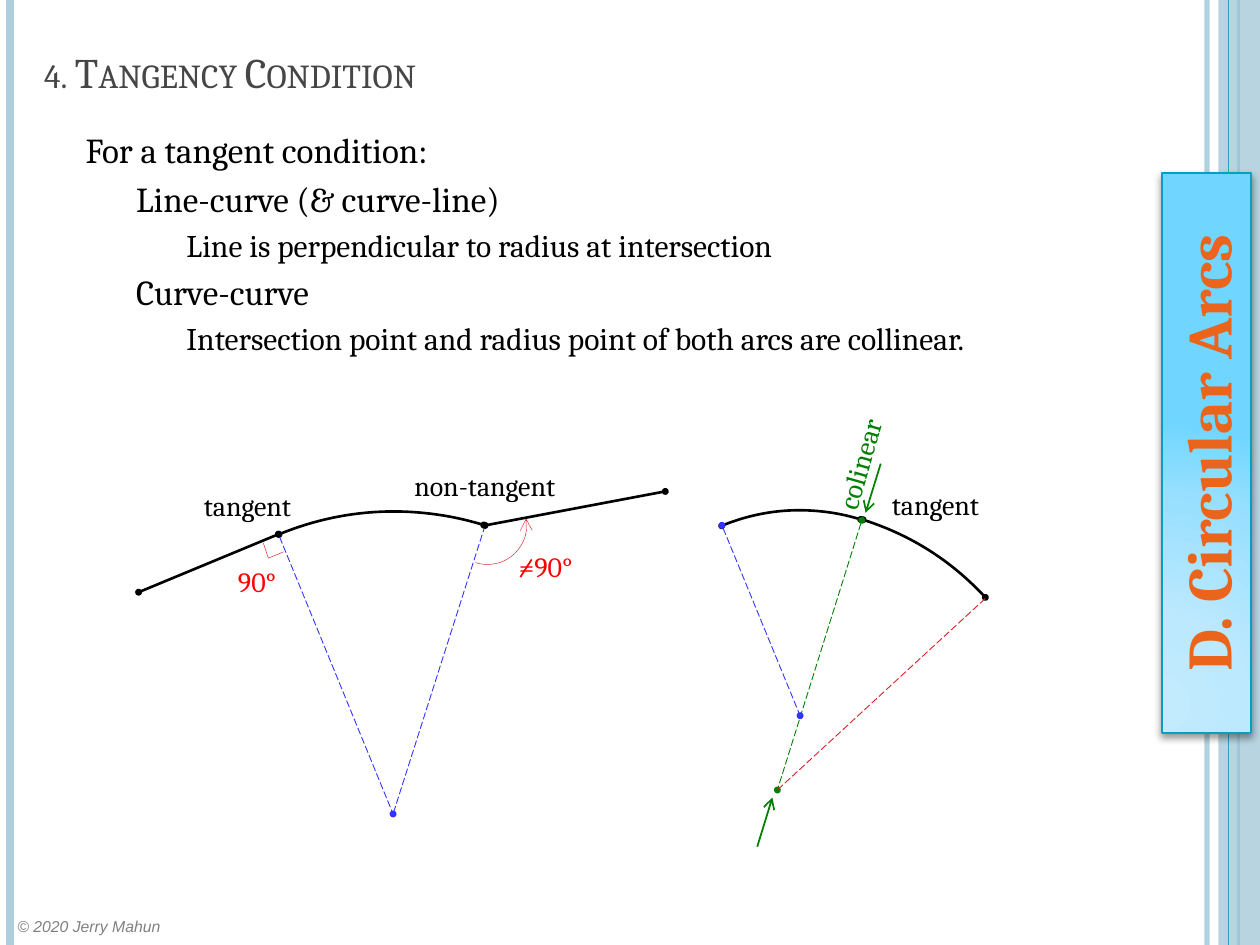
"""Build the slide on the tangency condition of circular arcs."""
from lxml.etree import SubElement
from pptx import Presentation
from pptx.dml.color import RGBColor
from pptx.enum.dml import MSO_LINE
from pptx.enum.shapes import MSO_CONNECTOR, MSO_SHAPE
from pptx.enum.text import MSO_ANCHOR, MSO_AUTO_SIZE, PP_ALIGN
from pptx.oxml.ns import qn
from pptx.util import Inches, Pt

WIDTH, HEIGHT = 10, 7.5
BAND_LEFT = 9.67
COLORS = {
    "black": "000000", "blue": "3333FF", "green": "008000", "red": "FF0000",
    "crimson": "DA1F28", "pale": "ADCEDC", "teal": "2DA2BF", "edge": "079EC3",
    "orange": "EB641B", "heading": "464646", "gray": "808080",
}
TITLE = "4. Tangency Condition"
BODY = [
    (0, "For a tangent condition:"),
    (1, "Line-curve (& curve-line)"),
    (2, "Line is perpendicular to radius at intersection"),
    (1, "Curve-curve"),
    (2, "Intersection point and radius point of both arcs are collinear."),
]
BODY_SIZES = (20, 20, 18)
LEVEL_INDENT = 0.4
STRIPES_BELOW = [(9.58, "pale", 3, 93), (0.08, "pale", 4.5, 100), (9.83, "teal", 1.5, 100)]
STRIPES_ABOVE = [(9.75, "teal", 0.75, 100)]
BANNER_STOPS = [(0, "C2EBFD"), (30, "BCE9FE"), (75, "96DFFE"), (100, "70D6FF")]

TANGENT, BREAK, CENTER = (2.21, 4.24), (3.85, 4.17), (3.12, 6.46)
CORNER = (2.13, 4.43)
START, JOIN, END = (5.73, 4.17), (6.84, 4.13), (7.82, 4.75)
NEAR_CENTER, FAR_CENTER = (6.35, 5.68), (6.17, 6.27)
DOTS = ("oval", "oval")
PLAIN = (None, None)

DIAGRAMS = [
    {
        "arcs": [((3.13, 6.46), 2.4, 337.6, (270, 309.6), "black", 1.5, DOTS),
                 ((3.87, 4.17), 0.31, 0, (349.8, 108), "crimson", 0.25, ("arrow", None))],
        "lines": [(BREAK, CENTER, "blue", 0.5, True, PLAIN),
                  (TANGENT, CENTER, "blue", 0.5, True, DOTS),
                  (TANGENT, (1.1, 4.7), "black", 1.5, False, DOTS),
                  ((2.09, 4.31), CORNER, "crimson", 0.25, False, PLAIN),
                  ((2.25, 4.38), CORNER, "crimson", 0.25, False, PLAIN),
                  ((5.28, 3.9), BREAK, "black", 1.5, False, DOTS),
                  ((4.22, 4.44), (4.13, 4.58), "red", 1, False, PLAIN)],
        "labels": [("90°", 1.79, 4.43, 0.54, 0, "red"),
                   ("=90°", 4.02, 4.31, 1.03, 0, "red"),
                   ("tangent", 1.52, 3.83, 1.01, 0, "black"),
                   ("non-tangent", 3.19, 3.67, 1.47, 0, "black")],
    },
    {
        "arcs": [(NEAR_CENTER, 1.63, 337.6, (270, 309.6), "black", 1.5, DOTS),
                 (FAR_CENTER, 2.25, 17.6, (270, 299.6), "black", 1.5, DOTS)],
        "lines": [(JOIN, FAR_CENTER, "green", 0.5, True, DOTS),
                  (END, FAR_CENTER, "crimson", 0.5, True, PLAIN),
                  (START, NEAR_CENTER, "blue", 0.5, True, DOTS),
                  ((6.99, 3.68), (6.87, 4.07), "green", 1, False, (None, "arrow")),
                  ((6.13, 6.33), (6.01, 6.72), "green", 1, False, ("arrow", None))],
        "labels": [("colinear", 6.32, 3.45, 1.03, 286.1, "green"),
                   ("tangent", 6.98, 3.82, 1.01, 0, "black")],
    },
]


def rgb(name):
    return RGBColor.from_string(COLORS[name])


def inches(*lengths):
    return [Inches(length) for length in lengths]


def add_alpha(element, percent):
    color = next(element.iter(qn("a:srgbClr")))
    SubElement(color, qn("a:alpha"), val=str(percent * 1000))


def style_line(line, color, width, ends=PLAIN, dashed=False):
    line.color.rgb = rgb(color)
    line.width = Pt(width)
    if dashed:
        line.dash_style = MSO_LINE.LONG_DASH
    for tag, kind in zip(("a:headEnd", "a:tailEnd"), ends):
        if kind:
            size = "sm" if kind == "oval" else "med"
            SubElement(line._get_or_add_ln(), qn(tag), type=kind, w=size, len=size)


def add_line(shapes, start, end, color, width, dashed=False, ends=PLAIN):
    connector = shapes.add_connector(MSO_CONNECTOR.STRAIGHT, *inches(*start, *end))
    style_line(connector.line, color, width, ends, dashed)
    SubElement(connector._element.spPr, qn("a:effectLst"))
    return connector


def add_arc(shapes, center, radius, rotation, angles, color, width, ends):
    left, top = (middle - radius for middle in center)
    arc = shapes.add_shape(MSO_SHAPE.ARC, *inches(left, top, 2 * radius, 2 * radius))
    arc.rotation = rotation
    for index, angle in enumerate(angles):
        arc.adjustments[index] = angle * 0.6
    arc.fill.background()
    arc.shadow.inherit = False
    style_line(arc.line, color, width, ends)


def add_text(para, text, size, color, font="Cambria"):
    span = para.add_run()
    span.text = text
    span.font.name = font
    span.font.size = Pt(size)
    span.font.color.rgb = rgb(color)
    return span


def add_label(shapes, text, left, top, width, rotation, color):
    box = shapes.add_textbox(*inches(left, top, width, 0.37))
    box.rotation = rotation
    box.text_frame.word_wrap = False
    add_text(box.text_frame.paragraphs[0], text, 16, color)


def add_stripes(shapes, stripes):
    for x, color, width, opacity in stripes:
        stripe = add_line(shapes, (x, 0), (x, HEIGHT), color, width)
        if opacity < 100:
            add_alpha(stripe._element.spPr, opacity)


def add_band(shapes):
    band = shapes.add_shape(MSO_SHAPE.RECTANGLE,
                            *inches(BAND_LEFT, 0, WIDTH - BAND_LEFT, HEIGHT))
    band.fill.solid()
    band.fill.fore_color.rgb = rgb("pale")
    add_alpha(band._element.spPr, 87)
    band.line.fill.background()
    band.shadow.inherit = False


def add_banner(shapes):
    banner = shapes.add_shape(MSO_SHAPE.RECTANGLE, *inches(7.35, 3.24, 4.45, 0.71))
    banner.rotation = 270
    banner.fill.gradient()
    gradient = banner._element.spPr.find(qn("a:gradFill"))
    for child in list(gradient):
        gradient.remove(child)
    stops = SubElement(gradient, qn("a:gsLst"))
    for position, color in BANNER_STOPS:
        stop = SubElement(stops, qn("a:gs"), pos=str(position * 1000))
        SubElement(stop, qn("a:srgbClr"), val=color)
    focus = SubElement(gradient, qn("a:path"), {"path": "circle"})
    SubElement(focus, qn("a:fillToRect"), l="5000", t="100000", r="120000", b="10000")
    style_line(banner.line, "edge", 1)
    banner.shadow.inherit = False
    effects = banner._element.spPr.find(qn("a:effectLst"))
    shadow = SubElement(effects, qn("a:outerShdw"), blurRad=str(Pt(4)), dist=str(Pt(2)),
                        dir="5400000", rotWithShape="0")
    SubElement(shadow, qn("a:srgbClr"), val=COLORS["black"])
    add_alpha(shadow, 40)
    frame = banner.text_frame
    frame.word_wrap = False
    frame.vertical_anchor = MSO_ANCHOR.MIDDLE
    frame.paragraphs[0].alignment = PP_ALIGN.CENTER
    add_text(frame.paragraphs[0], "D. Circular Arcs", 36, "orange").font.bold = True


def fill_placeholders(title, body):
    title.left, title.top, title.width, title.height = inches(0.25, 0.3, 8.42, 0.52)
    title.text_frame.vertical_anchor = MSO_ANCHOR.BOTTOM
    title.text_frame.auto_size = MSO_AUTO_SIZE.NONE
    para = title.text_frame.paragraphs[0]
    para.alignment = PP_ALIGN.LEFT
    add_text(para, TITLE, 24, "heading")._r.get_or_add_rPr().set("cap", "small")
    body.left, body.top, body.width, body.height = inches(0.58, 0.97, 8.08, 6.11)
    body.text_frame.auto_size = MSO_AUTO_SIZE.NONE
    for index, (level, text) in enumerate(BODY):
        para = body.text_frame.add_paragraph() if index else body.text_frame.paragraphs[0]
        para.level = level
        para.space_before = Pt(BODY_SIZES[level] * 0.2 if level else 6)
        properties = para._p.get_or_add_pPr()
        properties.set("marL", str(Inches(level * LEVEL_INDENT)))
        properties.set("indent", "0")
        SubElement(properties, qn("a:buNone"))
        add_text(para, text, BODY_SIZES[level], "black")


def main():
    deck = Presentation()
    deck.slide_width, deck.slide_height = inches(WIDTH, HEIGHT)
    page = deck.slides.add_slide(deck.slide_layouts[1])
    fill_placeholders(*page.placeholders)
    add_stripes(page.shapes, STRIPES_BELOW)
    add_band(page.shapes)
    add_stripes(page.shapes, STRIPES_ABOVE)
    credit = page.shapes.add_textbox(*inches(0.04, 7.23, 1.44, 0.25)).text_frame
    credit.word_wrap = True
    add_text(credit.paragraphs[0], "© 2020 Jerry Mahun", 9, "gray", "Arial").font.italic = True
    add_banner(page.shapes)
    for diagram in DIAGRAMS:
        shapes = page.shapes.add_group_shape().shapes
        for adder, part in ((add_arc, "arcs"), (add_line, "lines"), (add_label, "labels")):
            for item in diagram[part]:
                adder(shapes, *item)
    deck.save("out.pptx")


if __name__ == "__main__":
    main()
